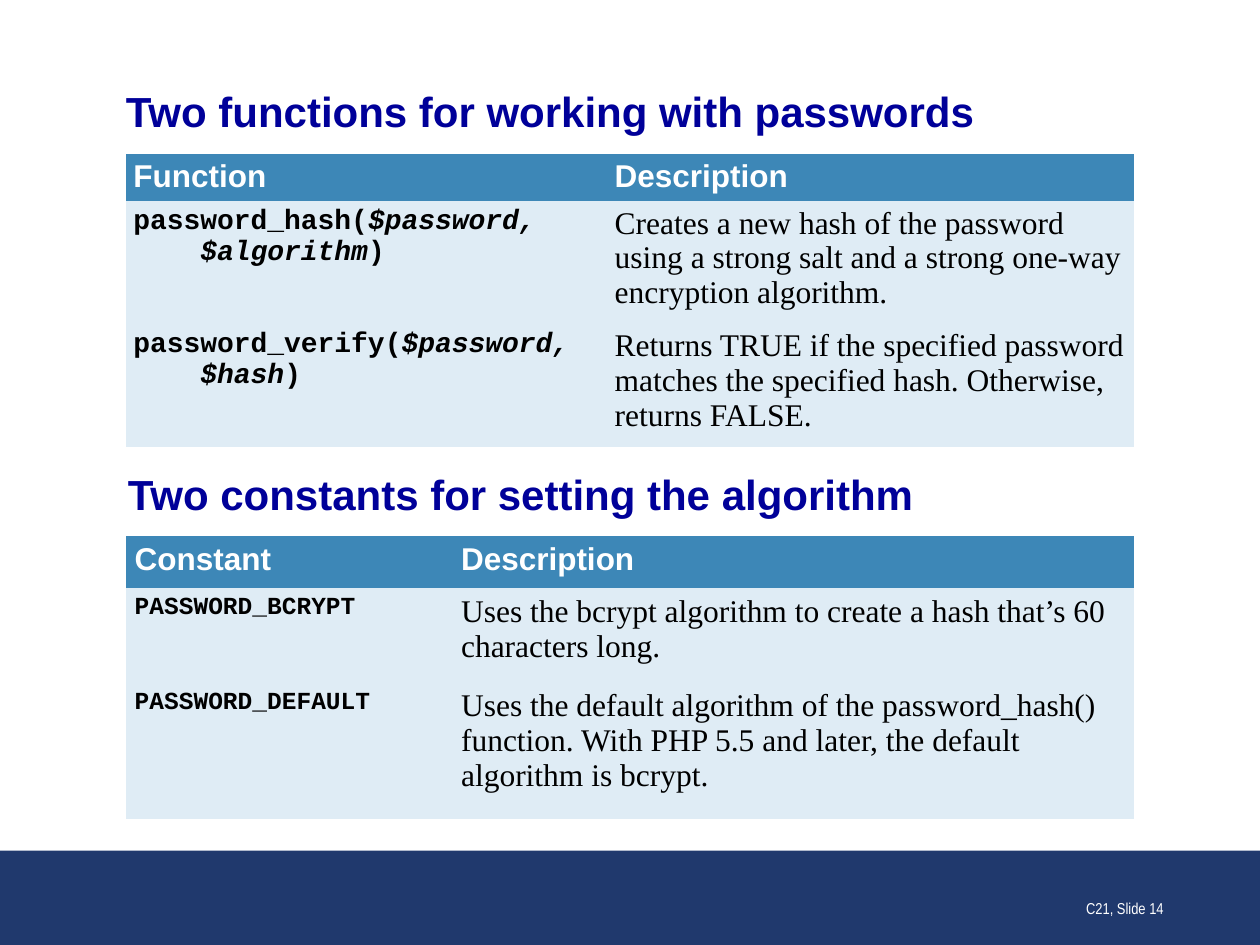
import pptx
import pptx.util
import pptx.dml.color
import pptx.enum.shapes
import pptx.enum.text
import pptx.oxml.ns

Pt = pptx.util.Pt
ANCHOR = pptx.enum.text.MSO_ANCHOR
ALIGN = pptx.enum.text.PP_ALIGN

COLORS = {
    "heading": "000099",
    "header": "3D87B7",
    "body": "DFECF5",
    "band": "20396D",
    "white": "FFFFFF",
    "black": "000000",
}
NO_STYLE = "{2D5ABB26-0587-4C30-8999-92F81FD0307C}"

HEADING = dict(font="Arial", size=24, color="heading", bold=True, after=6)
HEADER = dict(font="Arial", size=18, color="white", bold=True, after=6)
CODE = dict(font="Courier New", size=16, bold=True)
CONSTANT = dict(CODE, size=14)
PROSE = dict(font="Times New Roman", size=18)
FOOTER = dict(font="Arial Narrow", size=9, color="white", align=ALIGN.RIGHT)


def rgb(name):
    return pptx.dml.color.RGBColor.from_string(COLORS[name])


def write(tf, text, font="Arial", size=18, color="black", bold=False,
          align=ALIGN.LEFT, after=0):
    """Fill the first paragraph; text is a string or (string, italic) pairs."""
    p = tf.paragraphs[0]
    p.alignment = align
    p.space_after = Pt(after)
    for part, italic in [(text, False)] if isinstance(text, str) else text:
        for i, line in enumerate(part.split("\n")):
            if i:
                p.add_line_break()
            r = p.add_run()
            r.text = line
            r.font.name = font
            r.font.size = Pt(size)
            r.font.bold = bold
            r.font.italic = italic
            r.font.color.rgb = rgb(color)


class SlideBuilder:
    def __init__(self, slide):
        self.slide = slide

    def band(self, x, y, w, h):
        sp = self.slide.shapes.add_shape(
            pptx.enum.shapes.MSO_SHAPE.RECTANGLE, Pt(x), Pt(y), Pt(w), Pt(h))
        sp.shadow.inherit = False
        sp.fill.solid()
        sp.fill.fore_color.rgb = rgb("band")
        sp.line.fill.background()

    def text(self, x, y, w, h, text, anchor=ANCHOR.TOP, inset=(7.2, 3.6), **fmt):
        sp = self.slide.shapes.add_textbox(Pt(x), Pt(y), Pt(w), Pt(h))
        tf = sp.text_frame
        tf.word_wrap = True
        tf.vertical_anchor = anchor
        tf.margin_left = tf.margin_right = Pt(inset[0])
        tf.margin_top = tf.margin_bottom = Pt(inset[1])
        write(tf, text, **fmt)

    def table(self, x, y, widths, heights, rows, inset, code):
        frame = self.slide.shapes.add_table(
            len(rows), len(widths), Pt(x), Pt(y),
            Pt(sum(widths)), Pt(sum(heights)))
        table = frame.table
        table.horz_banding = False
        style = table._tbl.tblPr.find(pptx.oxml.ns.qn("a:tableStyleId"))
        style.text = NO_STYLE
        for column, width in zip(table.columns, widths):
            column.width = Pt(width)
        for i, (height, texts) in enumerate(zip(heights, rows)):
            table.rows[i].height = Pt(height)
            formats = (code, PROSE) if i else (HEADER, HEADER)
            for j, (text, fmt) in enumerate(zip(texts, formats)):
                cell = table.cell(i, j)
                cell.margin_left = cell.margin_right = Pt(inset[0])
                cell.margin_top = cell.margin_bottom = Pt(inset[1])
                cell.fill.solid()
                cell.fill.fore_color.rgb = rgb("body" if i else "header")
                write(cell.text_frame, text, **fmt)


def main():
    prs = pptx.Presentation()
    prs.slide_width, prs.slide_height = Pt(720), Pt(540)
    s = SlideBuilder(prs.slides.add_slide(prs.slide_layouts[6]))

    # Footer band
    s.band(0, 486, 720, 54)

    # Functions
    s.text(72, 49, 576, 29, "Two functions for working with passwords",
           anchor=ANCHOR.MIDDLE, inset=(0, 0), **HEADING)
    s.table(72, 88, (275, 301), (24, 60.5, 60.5), [
        ("Function", "Description"),
        ([("password_hash(", False), ("$password,\n    $algorithm", True),
          (")", False)],
         "Creates a new hash of the password using a strong salt and "
         "a strong one-way encryption algorithm."),
        ([("password_verify(", False), ("$password,\n    $hash", True),
          (")", False)],
         "Returns TRUE if the specified password matches the specified "
         "hash. Otherwise, returns FALSE."),
    ], inset=(4.3, 2.7), code=CODE)

    # Constants
    s.text(66, 264, 576, 42, "Two constants for setting the algorithm", **HEADING)
    s.table(72, 306, (186.5, 389.5), (30, 54, 78), [
        ("Constant", "Description"),
        ("PASSWORD_BCRYPT",
         "Uses the bcrypt algorithm to create a hash that’s 60 "
         "characters long."),
        ("PASSWORD_DEFAULT",
         "Uses the default algorithm of the password_hash() function. "
         "With PHP 5.5 and later, the default algorithm is bcrypt."),
    ], inset=(5, 3.6), code=CONSTANT)

    # Slide number
    s.text(522, 492, 150, 36, "C21, Slide 14", anchor=ANCHOR.BOTTOM, **FOOTER)

    prs.save("out.pptx")


if __name__ == "__main__":
    main()
